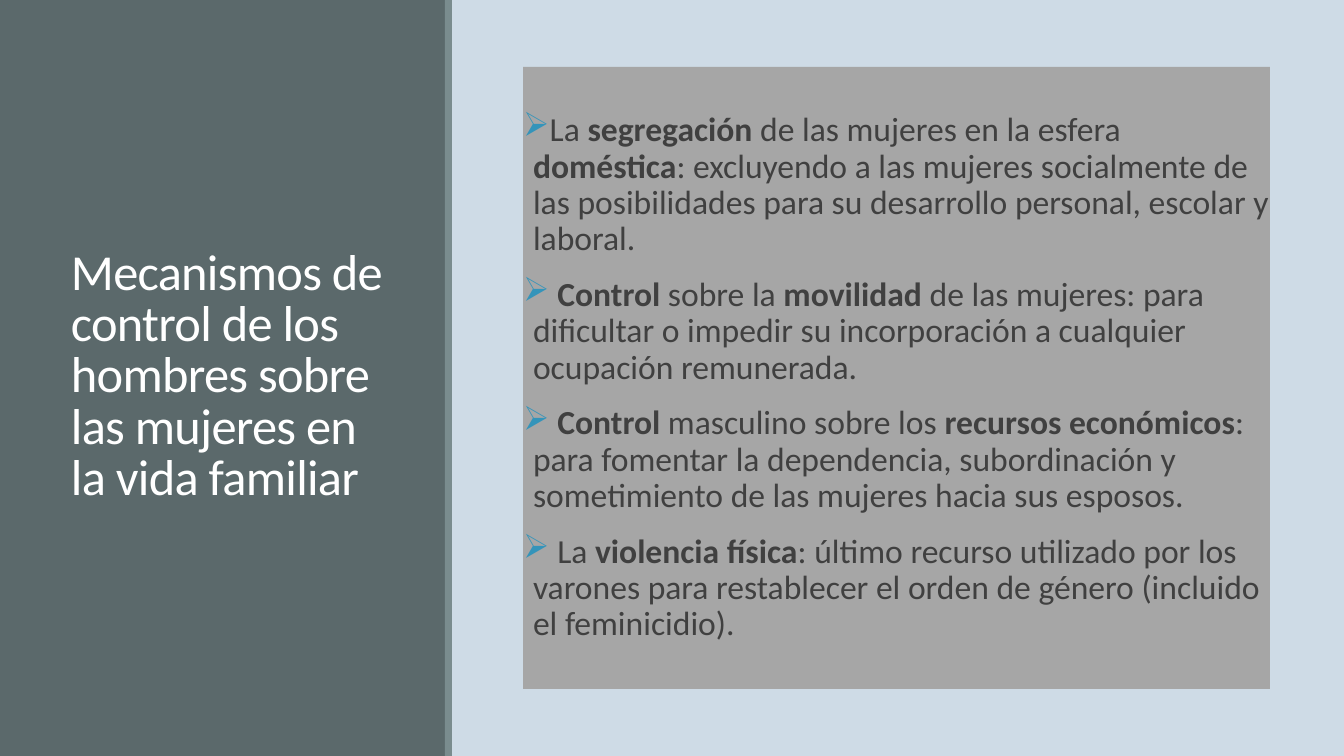
"""Build a slide on how men control women in family life."""
from lxml import etree
from pptx import Presentation
from pptx.dml.color import RGBColor
from pptx.enum.shapes import MSO_SHAPE
from pptx.enum.text import MSO_ANCHOR, PP_ALIGN
from pptx.oxml.ns import qn
from pptx.util import Emu, Pt

RECT = MSO_SHAPE.RECTANGLE
MIDDLE = MSO_ANCHOR.MIDDLE
LEFT = PP_ALIGN.LEFT

TITLE = "Mecanismos de control de los hombres sobre las mujeres en la vida familiar"
# Bold parts stand between asterisks.
POINTS = [
    "La *segregación* de las mujeres en la esfera *doméstica*: excluyendo a las mujeres "
    "socialmente de las posibilidades para su desarrollo personal, escolar y laboral.",
    "* Control *sobre la *movilidad *de las mujeres: para dificultar o impedir su "
    "incorporación a cualquier ocupación remunerada.",
    "* Control *masculino sobre los *recursos económicos*: para fomentar la dependencia, "
    "subordinación y sometimiento de las mujeres hacia sus esposos.",
    " La *violencia física*: último recurso utilizado por los varones para restablecer "
    "el orden de género (incluido el feminicidio).",
]
COLORS = {"back": "CEDBE6", "side": "5B696B", "strip": "7A8C8E", "panel": "A6A6A6",
          "title": "FFFFFF", "text": "404040", "bullet": "3494BA"}
WIDE, HIGH = 1344, 756
SIDE = (0, 0, 447, HIGH)
STRIP = (445, 0, 7, HIGH)
HEAD = (61, 171, 340, 413)
PANEL = (523, 67, 747, 622)
INDENT = 10


def px(n):
    return Emu(round(n * 914400 / 100.8))


def color(key):
    return RGBColor.from_string(COLORS[key])


def add_rect(slide, box, key):
    shape = slide.shapes.add_shape(RECT, *map(px, box))
    shape.shadow.inherit = False
    shape.fill.solid()
    shape.fill.fore_color.rgb = color(key)
    shape.line.fill.background()
    return shape


def style(run, size, key, bold=False):
    font = run.font
    font.name, font.size, font.bold = "Calibri", Pt(size), bold
    font.color.rgb = color(key)


def add_bullet(para):
    props = para._p.get_or_add_pPr()
    props.set("marL", str(px(INDENT)))
    props.set("indent", str(-px(INDENT)))
    tint = etree.SubElement(props, qn("a:buClr"))
    etree.SubElement(tint, qn("a:srgbClr"), val=COLORS["bullet"])
    etree.SubElement(props, qn("a:buChar"), char="➢")


def add_title(slide):
    frame = slide.shapes.add_textbox(*map(px, HEAD)).text_frame
    frame.word_wrap = True
    frame.vertical_anchor = MIDDLE
    frame.text = TITLE
    para = frame.paragraphs[0]
    para.line_spacing = 0.85
    run = para.runs[0]
    style(run, 36, "title")
    run.font._element.set("spc", "-50")


def add_points(slide):
    frame = add_rect(slide, PANEL, "panel").text_frame
    frame.word_wrap = True
    frame.vertical_anchor = MIDDLE
    frame.margin_left = frame.margin_right = 0
    for i, point in enumerate(POINTS):
        para = frame.add_paragraph() if i else frame.paragraphs[0]
        para.alignment = LEFT
        para.line_spacing = 0.9
        para.space_before, para.space_after = Pt(12), Pt(2)
        add_bullet(para)
        for j, part in enumerate(point.split("*")):
            if part:
                run = para.add_run()
                run.text = part
                style(run, 24, "text", j % 2 == 1)


def main():
    deck = Presentation()
    deck.slide_width, deck.slide_height = px(WIDE), px(HIGH)
    slide = deck.slides.add_slide(deck.slide_layouts[6])
    fill = slide.background.fill
    fill.solid()
    fill.fore_color.rgb = color("back")
    add_rect(slide, SIDE, "side")
    add_title(slide)
    add_rect(slide, STRIP, "strip")
    add_points(slide)
    deck.save("out.pptx")


if __name__ == "__main__":
    main()
